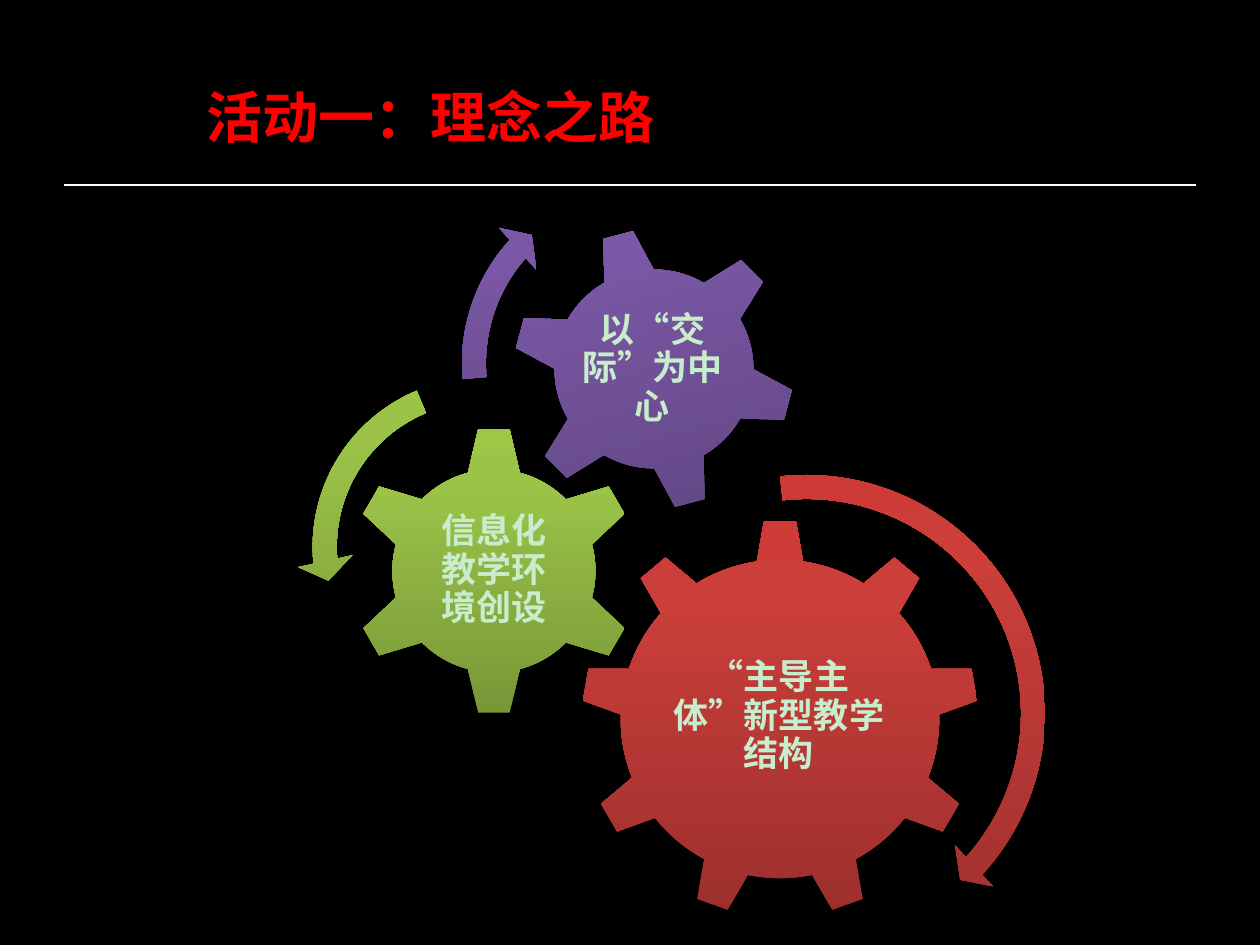
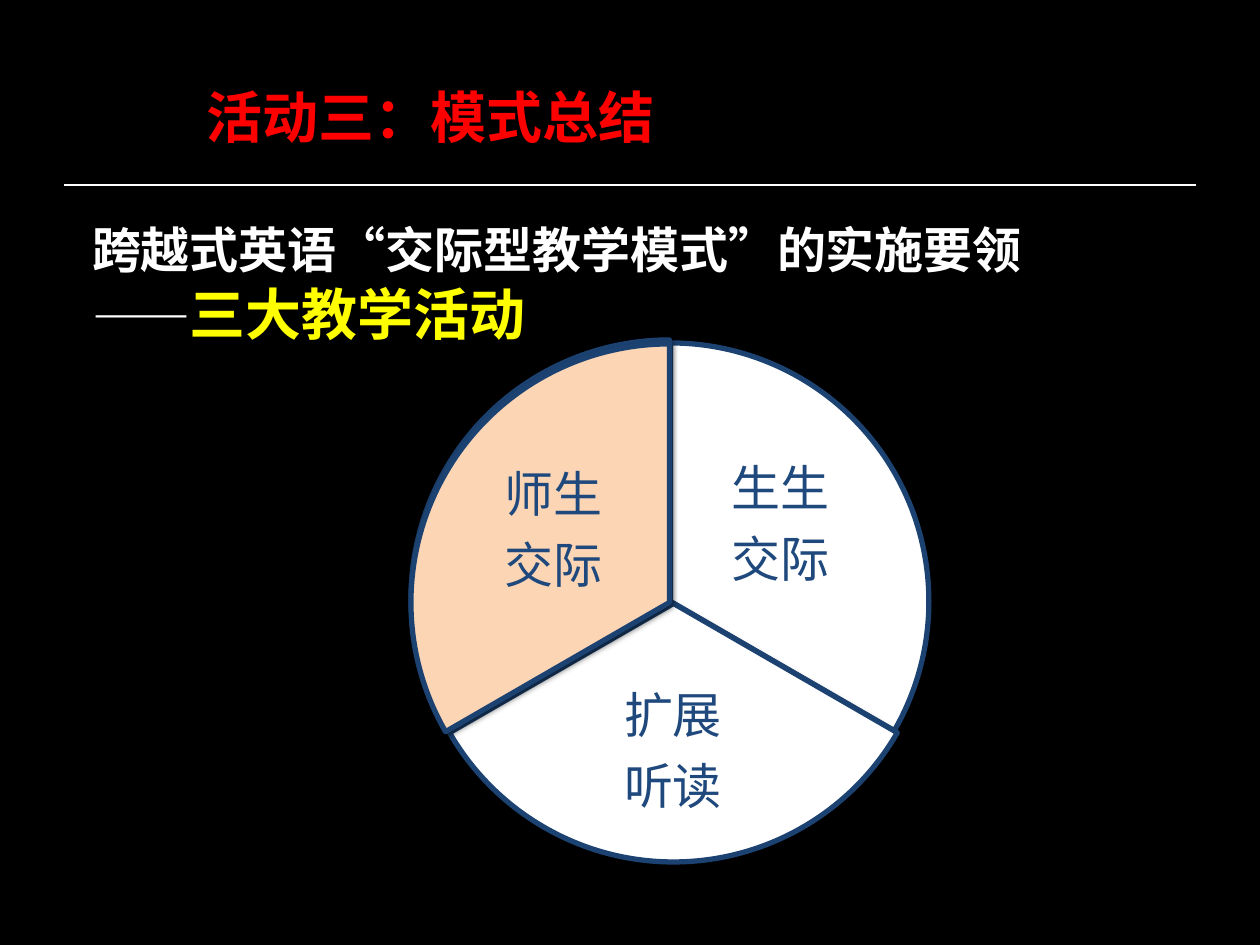
"""Two slides on communicative teaching: a gear diagram and a three-part circle."""
from copy import deepcopy

from pptx import Presentation
from pptx.dml.color import RGBColor
from pptx.enum.shapes import MSO_CONNECTOR, MSO_SHAPE as SHAPE
from pptx.enum.text import MSO_ANCHOR, MSO_AUTO_SIZE, PP_ALIGN
from pptx.oxml import parse_xml
from pptx.oxml.ns import nsdecls, qn
from pptx.util import Pt

PX = 914400 / 126
FONT = "Noto Sans CJK SC"

BLACK = RGBColor(0x00, 0x00, 0x00)
WHITE = RGBColor(0xFF, 0xFF, 0xFF)
RED = RGBColor(0xFF, 0x00, 0x00)
YELLOW = RGBColor(0xFF, 0xFF, 0x00)
MINT = RGBColor(0xC7, 0xED, 0xCC)
NAVY = RGBColor(0x1C, 0x42, 0x71)
BLUE = RGBColor(0x1F, 0x49, 0x7D)
PEACH = RGBColor(0xFC, 0xD5, 0xB5)

STOPS = (0, 0.8, 1)
RED_SHADES = (RGBColor(0x9C, 0x2F, 0x2D), RGBColor(0xCB, 0x3E, 0x3A), RGBColor(0xCE, 0x3B, 0x37))
GREEN_SHADES = (RGBColor(0x77, 0x97, 0x37), RGBColor(0x9B, 0xC3, 0x48), RGBColor(0x9D, 0xC7, 0x46))
PURPLE_SHADES = (RGBColor(0x5F, 0x44, 0x80), RGBColor(0x7B, 0x58, 0xA6), RGBColor(0x7C, 0x57, 0xA8))


def emu(*lengths):
    return [round(length * PX) for length in lengths]


class Deck:
    """Holds the shared style and the current slide."""

    def __init__(self):
        self.prs = Presentation()
        self.prs.slide_width, self.prs.slide_height = emu(1260, 945)
        backdrop = self.prs.slide_master.background.fill
        backdrop.solid()
        backdrop.fore_color.rgb = BLACK

    def new_slide(self, heading):
        self.slide = self.prs.slides.add_slide(self.prs.slide_layouts[5])
        title = self.slide.shapes.title
        title.left, title.top, title.width, title.height = emu(193, 76, 478, 81)
        self.frame(title, 13)
        self.paragraph(title.text_frame.paragraphs[0], heading, 32, RED, True, PP_ALIGN.LEFT)
        self.rule(64, 185, 1196)

    def frame(self, box, side_inset):
        text = box.text_frame
        text.word_wrap = True
        text.auto_size = MSO_AUTO_SIZE.NONE
        text.vertical_anchor = MSO_ANCHOR.MIDDLE
        text.margin_left, text.margin_right = emu(side_inset, side_inset)
        text.margin_top = text.margin_bottom = 0

    def paragraph(self, paragraph, text, size, color, bold=False, align=PP_ALIGN.CENTER):
        paragraph.text = text
        paragraph.alignment = align
        font = paragraph.font
        font.name, font.size, font.bold = FONT, Pt(size), bold
        font.color.rgb = color
        latin = paragraph._p.pPr.find(".//" + qn("a:latin"))
        latin.addnext(parse_xml(f'<a:ea {nsdecls("a")} typeface="{FONT}"/>'))

    def text(self, at, lines, size, color, bold=False, pitch=None, after=0,
             align=PP_ALIGN.CENTER, side_inset=4):
        box = self.slide.shapes.add_textbox(*emu(*at))
        self.frame(box, side_inset)
        for index, line in enumerate(lines):
            paragraph = box.text_frame.add_paragraph() if index else box.text_frame.paragraphs[0]
            self.paragraph(paragraph, line, size, color, bold, align)
            paragraph.line_spacing = Pt(pitch)
            if index < len(lines) - 1:
                paragraph.space_after = Pt(after)
        return box.text_frame

    def rule(self, left, top, right):
        line = self.slide.shapes.add_connector(MSO_CONNECTOR.STRAIGHT, *emu(left, top, right, top))
        line.line.color.rgb = WHITE
        line.line.width = Pt(0.75)
        line._element.spPr.append(parse_xml(f'<a:effectLst {nsdecls("a")}/>'))

    def shape(self, kind, left, top, size, adjustments=(), opacity=35):
        shape = self.slide.shapes.add_shape(kind, *emu(left, top, size, size))
        for index, value in enumerate(adjustments):
            shape.adjustments[index] = value
        shape.line.fill.background()
        shape.shadow.inherit = False
        effects = shape._element.spPr.find(qn("a:effectLst"))
        effects.append(parse_xml(
            f'<a:outerShdw {nsdecls("a")} blurRad="{Pt(3.1)}" dist="{Pt(1.7)}" dir="5400000" '
            f'rotWithShape="0"><a:srgbClr val="000000"><a:alpha val="{opacity * 1000}"/>'
            '</a:srgbClr></a:outerShdw>'))
        return shape

    def shaded(self, kind, left, top, size, shades, adjustments=(), rotation=0):
        shape = self.shape(kind, left, top, size, adjustments)
        shape.rotation = rotation
        shape.fill.gradient()
        shape.fill.gradient_angle = 90
        stop_list = shape._element.spPr.find(".//" + qn("a:gsLst"))
        stop_list.append(deepcopy(stop_list[0]))
        for stop, position, shade in zip(shape.fill.gradient_stops, STOPS, shades):
            stop.position = position
            stop.color.rgb = shade

    def wedge(self, left, top, start, color):
        ends = [angle % 360 * 0.6 for angle in (start, start + 120)]
        shape = self.shape(SHAPE.PIE, left, top, 517, ends, opacity=38)
        shape.fill.solid()
        shape.fill.fore_color.rgb = color
        shape.line.color.rgb = NAVY
        shape.line.width = Pt(3)


def ideas_slide(deck):
    deck.new_slide("活动一：理念之路")
    gears = (
        (SHAPE.GEAR_9, (581, 520, 398), 0, RED_SHADES, "“主导主体”新型教学结构", (660, 614, 238, 204)),
        (SHAPE.GEAR_6, (349, 426, 290), 0, GREEN_SHADES, "信息化教学环境创设", (422, 499, 144, 142)),
        (SHAPE.GEAR_6, (512, 227, 284), 345, PURPLE_SHADES, "以“交际”为中心", (573, 289, 159, 159)),
    )
    for kind, place, rotation, shades, idea, label_place in gears:
        deck.shaded(kind, *place, shades, rotation=rotation)
        deck.text(label_place, [idea], 20, MINT, True, pitch=22)
    turns = (
        (SHAPE.CIRCULAR_ARROW, (552, 459, 509), RED_SHADES, (0.047, 2.99, 25.367, 158.178, 0.055)),
        (SHAPE.LEFT_CIRCULAR_ARROW, (297, 362, 370), GREEN_SHADES, (0.065, 4.3, 104.891, 148.378, 0.075)),
        (SHAPE.CIRCULAR_ARROW, (446, 164, 399), PURPLE_SHADES, (0.06, 3.941, 133.138, 105.082, 0.07)),
    )
    for kind, place, shades, adjustments in turns:
        deck.shaded(kind, *place, shades, adjustments)


def activities_slide(deck):
    deck.new_slide("活动三：模式总结")
    for left, top, start, color in ((412, 343, 270, WHITE), (415, 345, 30, WHITE),
                                    (411, 340, 150, WHITE), (411, 344, 150, PEACH)):
        deck.wedge(left, top, start, color)
    for place, words in (((698, 444, 165, 161), ("生生", "交际")),
                         ((561, 677, 224, 150), ("扩展", "听读")),
                         ((471, 450, 165, 162), ("师生", "交际"))):
        deck.text(place, words, 28, BLUE, pitch=30.8, after=9.8)
    summary = deck.text((79, 204, 1066, 149), ["跨越式英语“交际型教学模式”的实施要领\v——"],
                        28, WHITE, True, pitch=39, align=PP_ALIGN.LEFT, side_inset=13)
    activities = summary.paragraphs[0].add_run()
    activities.text = "三大教学活动"
    activities.font.size = Pt(32)
    activities.font.color.rgb = YELLOW


def main():
    deck = Deck()
    ideas_slide(deck)
    activities_slide(deck)
    deck.prs.save("out.pptx")


if __name__ == "__main__":
    main()
